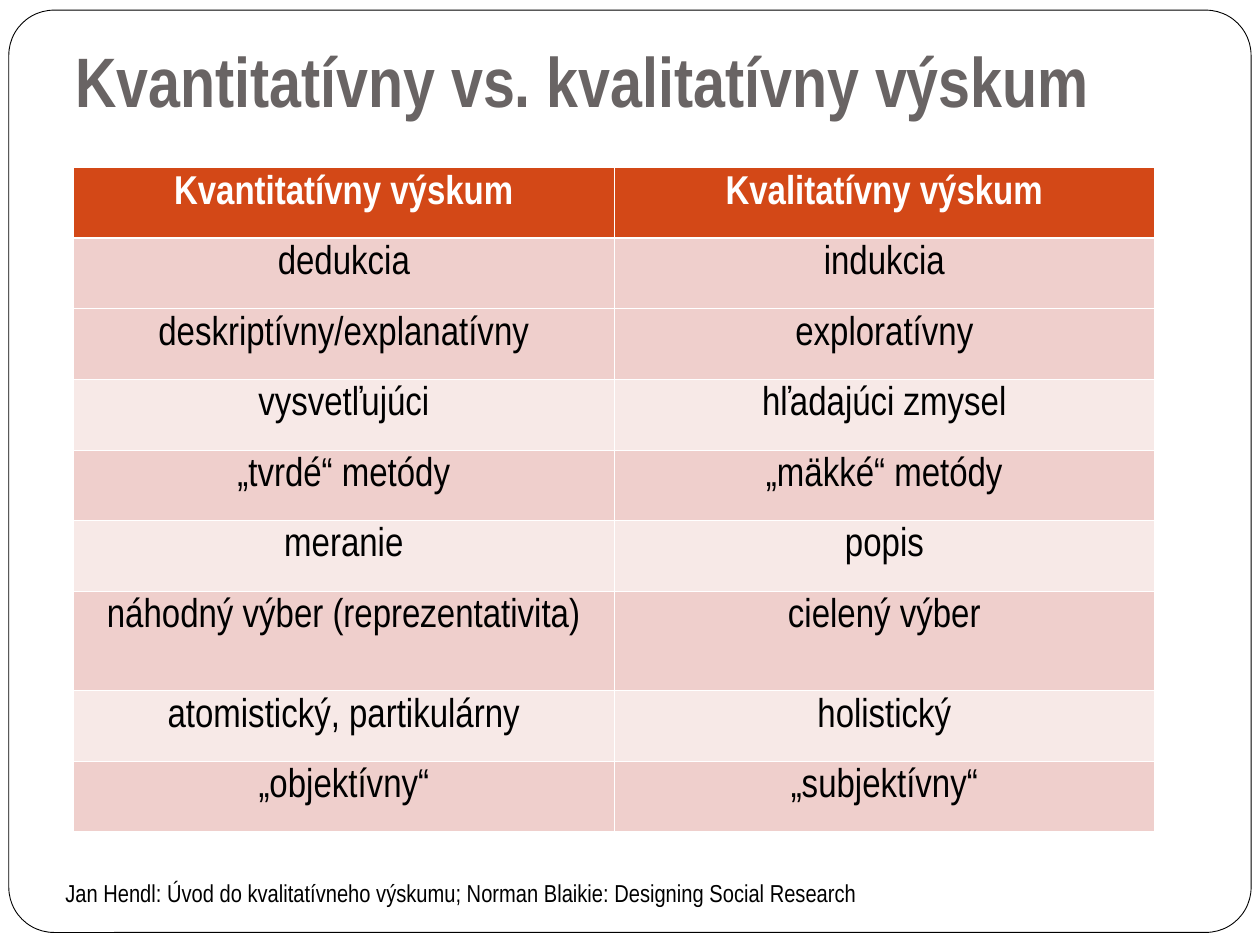
from dataclasses import dataclass

from lxml import etree
from pptx import Presentation
from pptx.dml.color import RGBColor
from pptx.enum.shapes import MSO_SHAPE
from pptx.enum.text import PP_ALIGN
from pptx.oxml.ns import qn
from pptx.util import Inches, Pt

ROUND = MSO_SHAPE.ROUNDED_RECTANGLE
LEFT, CENTER = PP_ALIGN.LEFT, PP_ALIGN.CENTER
WIDE, HIGH = Inches(10), Inches(7.5)
ROW, TALL = Inches(0.56), Inches(0.79)
TALL_ROW = 6


@dataclass(frozen=True)
class Theme:
    font: str = "Arial Narrow"
    ink: str = "000000"
    paper: str = "FFFFFF"
    gray: str = "696464"
    head: str = "D34817"
    dark: str = "EFCFCC"
    light: str = "F7E9E7"
    title: int = 40
    cell: int = 23
    note: int = 14
    thin: float = 0.45
    thick: float = 1.47


@dataclass(frozen=True)
class Area:
    """A box in shares of the slide's size."""
    x: float
    y: float
    w: float
    h: float

    def place(self) -> tuple[int, int, int, int]:
        return (round(self.x * WIDE), round(self.y * HIGH),
                round(self.w * WIDE), round(self.h * HIGH))


@dataclass(frozen=True)
class Style:
    size: int
    color: str
    bold: bool = False
    align: PP_ALIGN = LEFT
    lead: float = 1.0


@dataclass(frozen=True)
class Label:
    text: str
    area: Area
    style: Style


@dataclass(frozen=True)
class Pair:
    quant: str
    qual: str


THEME = Theme()
FRAME = Area(0.007, 0.0107, 0.986, 0.976)
GRID = Area(0.0585, 0.1775, 0.858, 0.7)
HEAD = Style(THEME.cell, THEME.paper, True, CENTER, 0.96)
BODY = Style(THEME.cell, THEME.ink, False, CENTER, 0.96)

LABELS = [
    Label("Jan Hendl: Úvod do kvalitatívneho výskumu; "
          "Norman Blaikie: Designing Social Research",
          Area(0.042, 0.923, 0.858, 0.045), Style(THEME.note, THEME.ink)),
    Label("Kvantitatívny vs. kvalitatívny výskum",
          Area(0.05, 0.033, 0.9, 0.104), Style(THEME.title, THEME.gray, True)),
]

PAIRS = [
    Pair("Kvantitatívny výskum", "Kvalitatívny výskum"),
    Pair("dedukcia", "indukcia"),
    Pair("deskriptívny/explanatívny", "exploratívny"),
    Pair("vysvetľujúci", "hľadajúci zmysel"),
    Pair("„tvrdé“ metódy", "„mäkké“ metódy"),
    Pair("meranie", "popis"),
    Pair("náhodný výber (reprezentativita)", "cielený výber"),
    Pair("atomistický, partikulárny", "holistický"),
    Pair("„objektívny“", "„subjektívny“"),
]


def rgb(code: str) -> RGBColor:
    return RGBColor.from_string(code)


def write(frame, text: str, style: Style) -> None:
    line = frame.paragraphs[0]
    line.alignment = style.align
    line.line_spacing = style.lead
    run = line.add_run()
    run.text = text
    font = run.font
    font.name, font.size, font.bold = THEME.font, Pt(style.size), style.bold
    font.color.rgb = rgb(style.color)


def edge(cell, side: str, width: float) -> None:
    """Add one cell border; call before the cell's fill is set."""
    line = etree.SubElement(cell._tc.get_or_add_tcPr(), qn(f"a:ln{side}"),
                            w=str(int(Pt(width))))
    fill = etree.SubElement(line, qn("a:solidFill"))
    etree.SubElement(fill, qn("a:srgbClr"), val=THEME.paper)


def shade(row: int) -> str:
    if row == 0:
        return THEME.head
    return THEME.light if row > 1 and row % 2 else THEME.dark


def draw_cell(cell, text: str, row: int) -> None:
    cell.margin_left = cell.margin_right = Inches(0.1)
    cell.margin_top, cell.margin_bottom = Inches(0.06), Inches(0.05)
    heavy = {0: "B", 1: "T"}.get(row)
    for side in "LRTB":
        edge(cell, side, THEME.thick if side == heavy else THEME.thin)
    cell.fill.solid()
    cell.fill.fore_color.rgb = rgb(shade(row))
    write(cell.text_frame, text, BODY if row else HEAD)


def draw_grid(slide, area: Area, pairs: list[Pair]) -> None:
    table = slide.shapes.add_table(len(pairs), 2, *area.place()).table
    for r, pair in enumerate(pairs):
        table.rows[r].height = TALL if r == TALL_ROW else ROW
        for c, text in enumerate((pair.quant, pair.qual)):
            draw_cell(table.cell(r, c), text, r)


def draw_frame(slide, area: Area) -> None:
    box = slide.shapes.add_shape(ROUND, *area.place())
    box.adjustments[0] = 0.049
    box.shadow.inherit = False
    box.fill.background()
    box.line.color.rgb = rgb(THEME.ink)
    box.line.width = Pt(0.5)


def draw_label(slide, label: Label) -> None:
    frame = slide.shapes.add_textbox(*label.area.place()).text_frame
    frame.word_wrap = True
    write(frame, label.text, label.style)


def main() -> None:
    deck = Presentation()
    deck.slide_width, deck.slide_height = WIDE, HIGH
    slide = deck.slides.add_slide(deck.slide_layouts[6])
    draw_frame(slide, FRAME)
    draw_grid(slide, GRID, PAIRS)
    for label in LABELS:
        draw_label(slide, label)
    deck.save("out.pptx")


if __name__ == "__main__":
    main()
